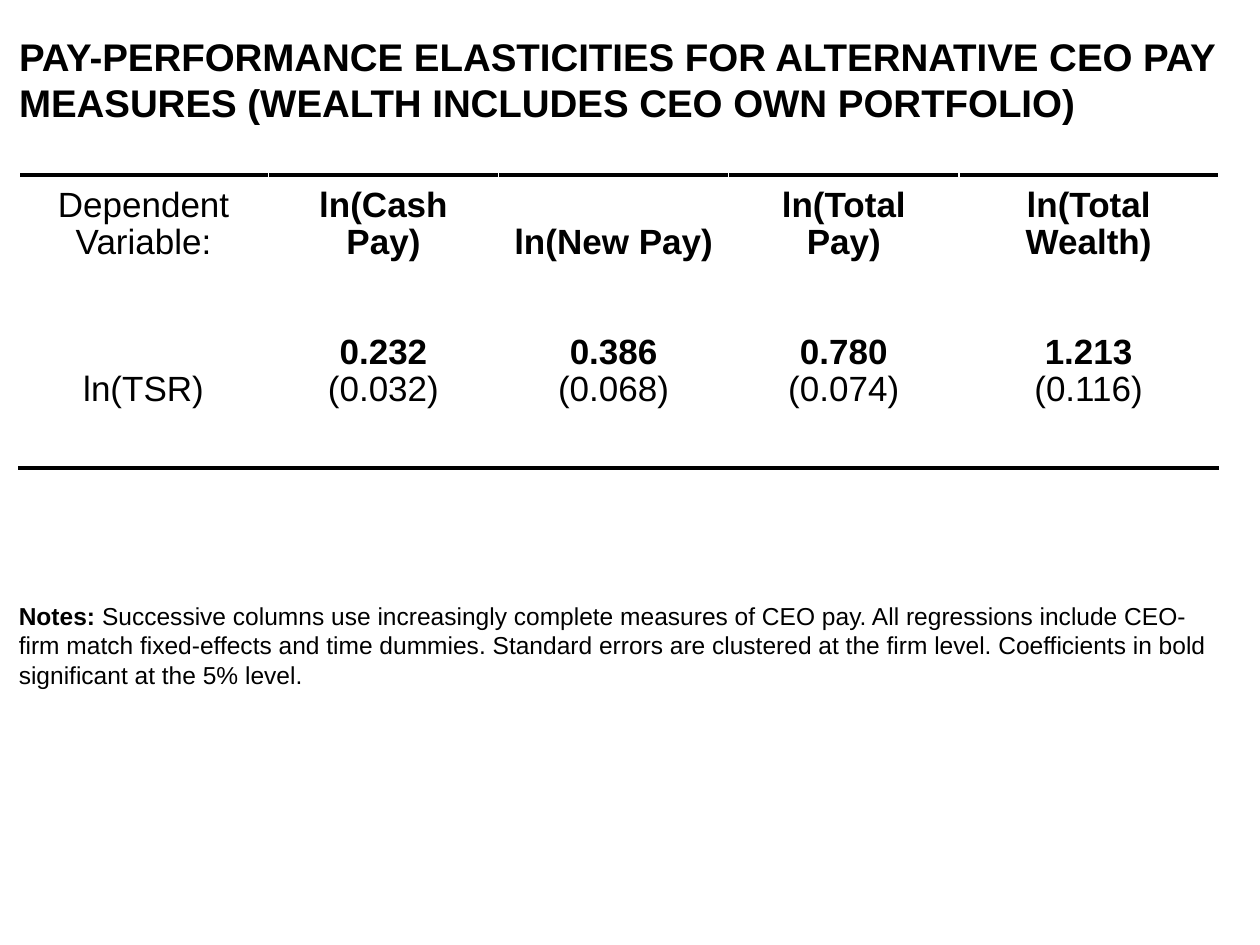
"""Build a slide with a table of pay-performance elasticities."""
import pptx
import pptx.dml.color
import pptx.enum.text
import pptx.oxml
import pptx.oxml.ns
import pptx.util

Cm = pptx.util.Cm
ALIGN = pptx.enum.text.PP_ALIGN
ANCHOR = pptx.enum.text.MSO_ANCHOR
COLOURS = {"ink": "000000"}


def write(frame, paragraphs, size, align=ALIGN.LEFT, spacing=1.0):
    """Fill a text frame with paragraphs of (text, bold) runs."""
    frame.word_wrap = True
    for index, runs in enumerate(paragraphs):
        paragraph = frame.paragraphs[0] if index == 0 else frame.add_paragraph()
        paragraph.alignment = align
        paragraph.line_spacing = spacing
        for text, bold in runs:
            run = paragraph.add_run()
            run.text = text
            run.font.name = "Arial"
            run.font.size = pptx.util.Pt(size)
            run.font.bold = bold
            run.font.color.rgb = pptx.dml.color.RGBColor.from_string(COLOURS["ink"])


def rule(cell, side):
    """Draw a 3 pt border on one side of a cell."""
    border = pptx.oxml.parse_xml(
        f'<a:{side} {pptx.oxml.ns.nsdecls("a")} w="{pptx.util.Pt(3)}"><a:solidFill>'
        f'<a:srgbClr val="{COLOURS["ink"]}"/></a:solidFill></a:{side}>'
    )
    cell._tc.get_or_add_tcPr().insert(0, border)


deck = pptx.Presentation()
deck.slide_width, deck.slide_height = Cm(25.4), Cm(19.05)
slide = deck.slides.add_slide(deck.slide_layouts[5])

title = slide.shapes.title
title.left, title.top, title.width, title.height = Cm(0.13), Cm(0.53), Cm(24.89), Cm(2.13)
title.text_frame.vertical_anchor = ANCHOR.TOP
title.text_frame.auto_size = pptx.enum.text.MSO_AUTO_SIZE.SHAPE_TO_FIT_TEXT
heading = "PAY-PERFORMANCE ELASTICITIES FOR ALTERNATIVE CEO PAY MEASURES (WEALTH INCLUDES CEO OWN PORTFOLIO)"
write(title.text_frame, [[(heading, True)]], size=22)

measures = [
    ("ln(Cash Pay)", "0.232", "(0.032)"),
    ("ln(New Pay)", "0.386", "(0.068)"),
    ("ln(Total Pay)", "0.780", "(0.074)"),
    ("ln(Total Wealth)", "1.213", "(0.116)"),
]
header_row = [[[("Dependent Variable:", False)]]]
result_row = [[[("ln(TSR)", False)]]]
for measure, coefficient, error in measures:
    header_row.append([[(measure, True)]])
    result_row.append([[(coefficient, True)], [(error, False)]])
blank_row = [[]] * len(header_row)
rows = [header_row, blank_row, result_row, blank_row]
widths = [5.03, 4.64, 4.64, 4.64, 5.23]
heights = [1.88, 1.09, 1.85, 1.07]

elasticities = slide.shapes.add_table(
    len(rows), len(widths), Cm(0.38), Cm(3.53), Cm(sum(widths)), Cm(sum(heights))
).table
elasticities.first_row = elasticities.horz_banding = False
for column, width in zip(elasticities.columns, widths):
    column.width = Cm(width)
for row_index, (contents, height) in enumerate(zip(rows, heights)):
    elasticities.rows[row_index].height = Cm(height)
    for column_index, paragraphs in enumerate(contents):
        cell = elasticities.cell(row_index, column_index)
        cell.fill.background()
        cell.vertical_anchor = ANCHOR.BOTTOM
        write(cell.text_frame, paragraphs, size=20, align=ALIGN.CENTER, spacing=0.95)
        if row_index == 0:
            rule(cell, "lnT")
        elif row_index == len(rows) - 1:
            rule(cell, "lnB")

notes = slide.shapes.add_textbox(Cm(0.13), Cm(11.99), Cm(24.56), Cm(2.06)).text_frame
notes.auto_size = pptx.enum.text.MSO_AUTO_SIZE.SHAPE_TO_FIT_TEXT
explanation = (
    "Successive columns use increasingly complete measures of CEO pay. "
    "All regressions include CEO-firm match fixed-effects and time dummies. "
    "Standard errors are clustered at the firm level. "
    "Coefficients in bold significant at the 5% level."
)
write(notes, [[("Notes: ", True), (explanation, False)]], size=14)

deck.save("out.pptx")
